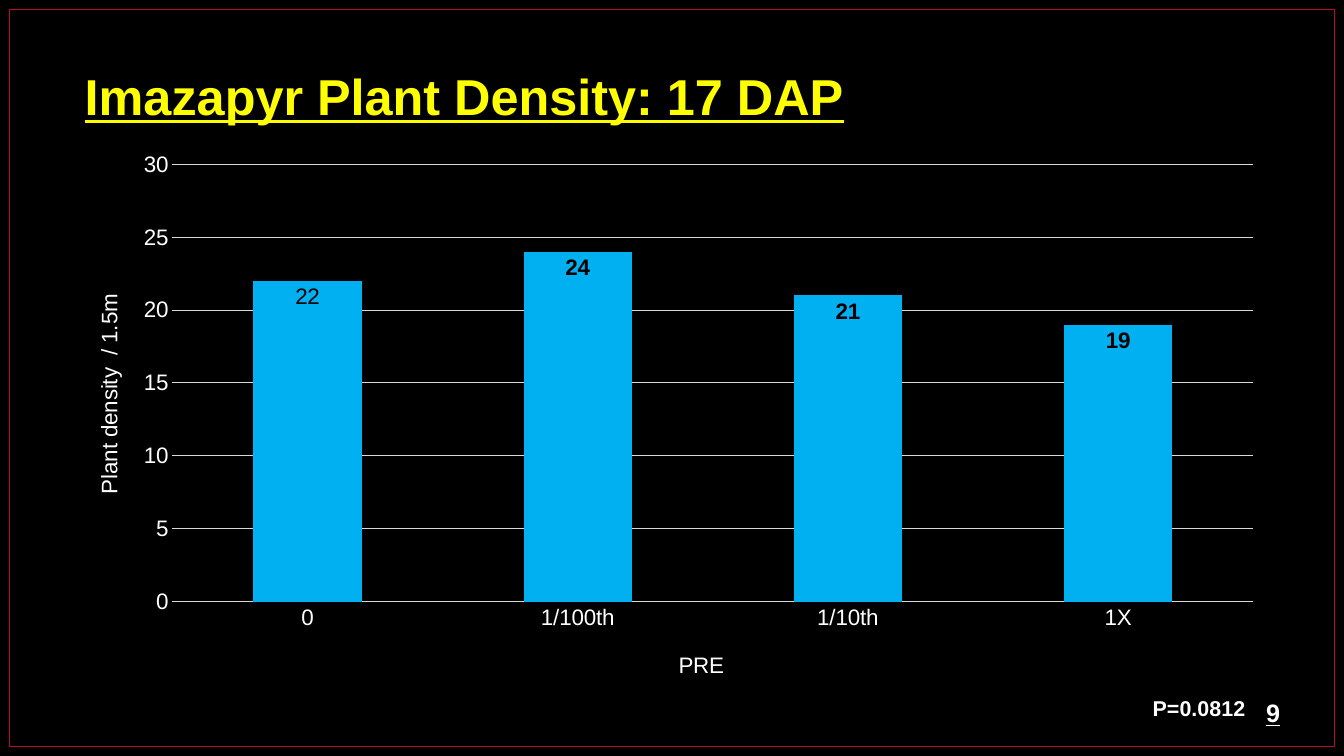
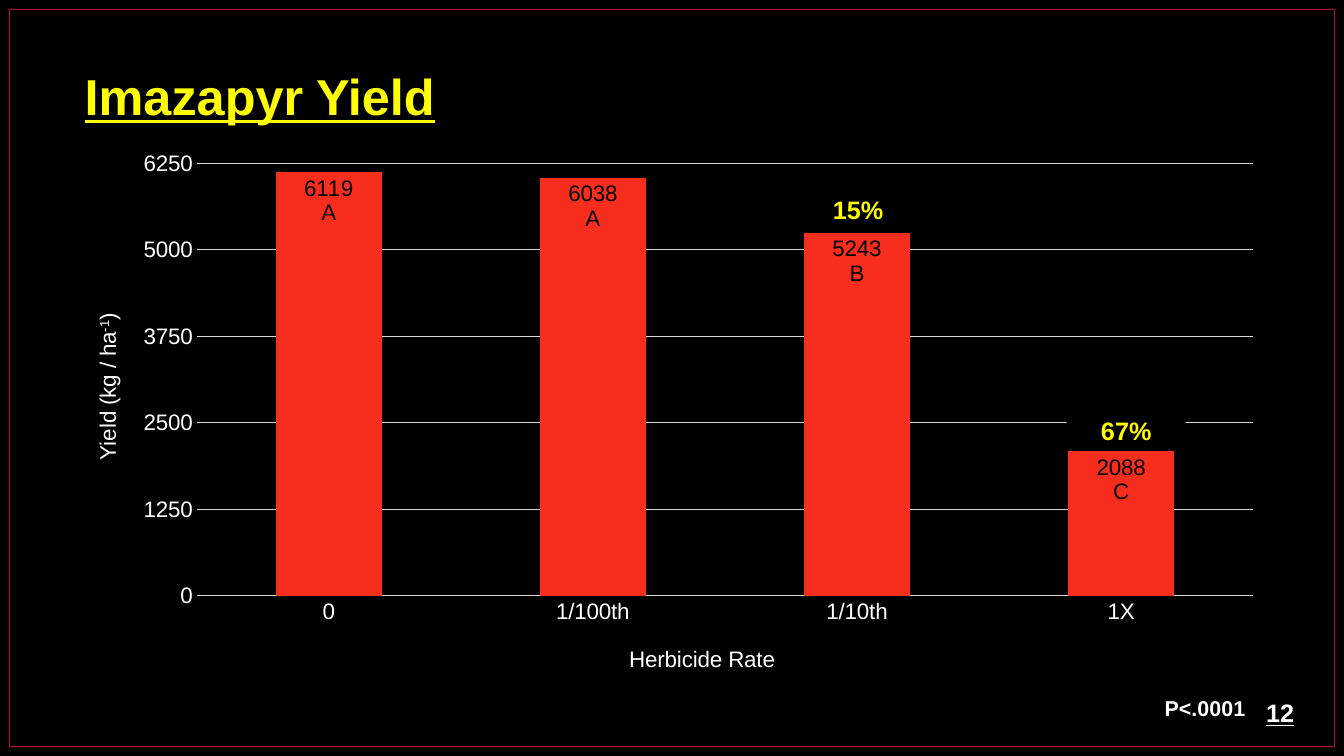
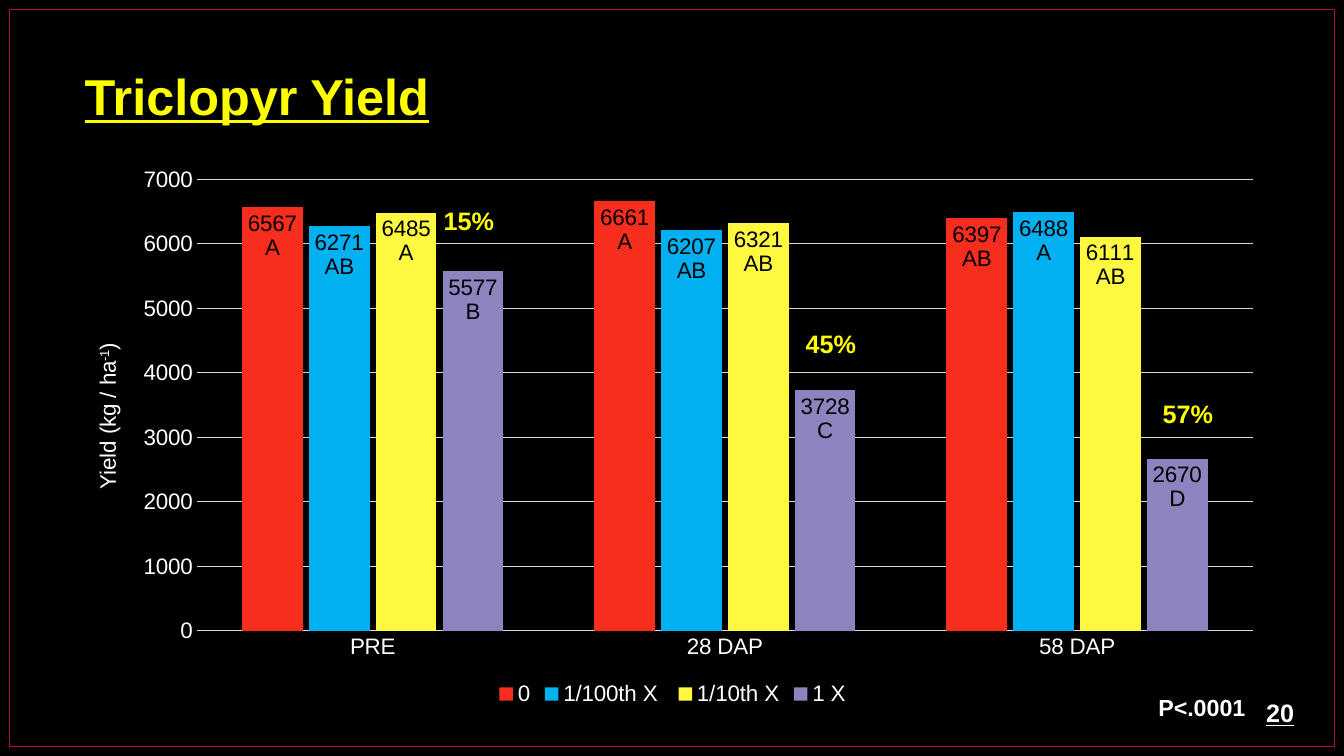
import pptx
import pptx.chart.data
import pptx.dml.color
import pptx.enum.chart
import pptx.enum.shapes
import pptx.enum.text
import pptx.oxml
import pptx.oxml.ns
import pptx.util

# Shared look
WIDTH, HEIGHT = 13.33, 7.5
FONT = "Arial"
BLACK, WHITE, YELLOW, CRIMSON, GRID = "000000", "FFFFFF", "FFFF00", "BA0C2F", "D9D9D9"
RED, BLUE, LEMON, VIOLET = "F72D1D", "00B0F0", "FFF840", "8C84BE"
AXIS_SIZE = 16
CHART_LEFT, CHART_WIDTH, CHART_HEIGHT = 0.67, 12, 5.5
PLOT_RIGHT = 12.43
CALLOUT_SIZE = (1.18, 0.4)
RATES = ["0", "1/100th", "1/10th", "1X"]
YIELD = [("Yield (kg / ha", False), ("-1", True), (")", False)]

# Content: plot is left, top, bottom; axis titles are runs, left, top;
# series are name, colour, values, letters; callouts are text, left, top, fill
SLIDES = [
    {
        "title": "Imazapyr Plant Density: 17 DAP", "number": "9",
        "p_value": ("P=0.0812", 15.3, 0.8),
        "chart_top": 1.4, "plot": (1.71, 1.63, 5.97), "scale": (30, 5),
        "category_title": ([("PRE", False)], 6.69, 6.42),
        "value_title": ([("Plant density  / 1.5m", False)], 0.9, 2.88),
        "categories": RATES,
        "series": [("Series 1", BLUE, [22, 24, 21, 19], None)],
        "callouts": [],
    },
    {
        "title": "Imazapyr Yield", "number": "12",
        "p_value": ("P<.0001", 15.3, 0.8),
        "chart_top": 1.34, "plot": (1.95, 1.45, 5.91), "scale": (6500, 1250),
        "category_title": ([("Herbicide Rate", False)], 6.2, 6.36),
        "value_title": (YIELD, 0.9, 3.08),
        "categories": RATES,
        "series": [("Series 1", RED, [6119, 6038, 5243, 2088], ["A", "A", "B", "C"])],
        "callouts": [("15%", 7.92, 1.88, None), ("67%", 10.58, 4.07, BLACK)],
    },
    {
        "title": "Triclopyr Yield", "number": "20",
        "p_value": ("P<.0001", 16.6, 0.7),
        "chart_top": 1.55, "plot": (1.95, 1.78, 6.26), "scale": (7000, 1000),
        "category_title": None,
        "value_title": (YIELD, 0.9, 3.37),
        "categories": ["PRE", "28 DAP", "58 DAP"],
        "series": [
            ("0", RED, [6567, 6661, 6397], ["A", "A", "AB"]),
            ("1/100th X ", BLUE, [6271, 6207, 6488], ["AB", "AB", "A"]),
            ("1/10th X", LEMON, [6485, 6321, 6111], ["A", "AB", "AB"]),
            ("1 X", VIOLET, [5577, 3728, 2670], ["B", "C", "D"]),
        ],
        "callouts": [("15%", 4.06, 1.99, None), ("45%", 7.65, 3.21, None),
                     ("57%", 11.19, 3.9, None)],
    },
]


def rgb(color):
    return pptx.dml.color.RGBColor.from_string(color)


def inches(*lengths):
    return [pptx.util.Inches(length) for length in lengths]


def style_font(font, size, color, bold=False, underline=None):
    font.name, font.size = FONT, pptx.util.Pt(size)
    font.bold, font.underline = bold, underline
    font.color.rgb = rgb(color)


def write(shape, text, size, color, align="LEFT", anchor="TOP", underline=None):
    frame = shape.text_frame
    frame.word_wrap = True
    frame.auto_size = pptx.enum.text.MSO_AUTO_SIZE.NONE
    frame.vertical_anchor = getattr(pptx.enum.text.MSO_ANCHOR, anchor)
    paragraph = frame.paragraphs[0]
    paragraph.text = text
    paragraph.alignment = getattr(pptx.enum.text.PP_ALIGN, align)
    style_font(paragraph.font, size, color, True, underline)
    return paragraph


def add_text(slide, box, *arguments, **options):
    shape = slide.shapes.add_textbox(*inches(*box))
    return shape, write(shape, *arguments, **options)


# Chart parts
def place(parent, index, chart_top, left, top, right=None, bottom=None):
    """Fix a chart part at slide coordinates."""
    layout = parent.find(pptx.oxml.ns.qn("c:layout"))
    if layout is not None:
        parent.remove(layout)
    values = []
    if right is not None:
        values.append(("layoutTarget", "inner"))
    values += [("xMode", "edge"), ("yMode", "edge"),
               ("x", (left - CHART_LEFT) / CHART_WIDTH),
               ("y", (top - chart_top) / CHART_HEIGHT)]
    if right is not None:
        values += [("w", (right - left) / CHART_WIDTH),
                   ("h", (bottom - top) / CHART_HEIGHT)]
    body = "".join(f'<c:{tag} val="{value}"/>' for tag, value in values)
    parent.insert(index, pptx.oxml.parse_xml(
        f'<c:layout {pptx.oxml.ns.nsdecls("c")}><c:manualLayout>{body}'
        '</c:manualLayout></c:layout>'))


def title_axis(axis, chart_top, title, rotation):
    runs, left, top = title
    frame = axis.axis_title.text_frame
    frame._txBody.bodyPr.set("rot", str(rotation))
    frame._txBody.bodyPr.set("vert", "horz")
    paragraph = frame.paragraphs[0]
    style_font(paragraph.font, AXIS_SIZE, WHITE)
    for text, superscript in runs:
        run = paragraph.add_run()
        run.text = text
        style_font(run.font, AXIS_SIZE, WHITE)
        if superscript:
            run._r.get_or_add_rPr().set("baseline", "30000")
    place(axis.axis_title._element, 1, chart_top, left, top)


def style_axis(axis):
    axis.major_tick_mark = axis.minor_tick_mark = pptx.enum.chart.XL_TICK_MARK.NONE
    style_font(axis.tick_labels.font, AXIS_SIZE, WHITE)


def style_line(line):
    line.color.rgb = rgb(GRID)
    line.width = pptx.util.Pt(0.75)


def label_series(series, values, letters):
    inside_end = pptx.enum.chart.XL_LABEL_POSITION.INSIDE_END
    labels = series.data_labels
    labels.show_value = True
    labels.position = inside_end
    style_font(labels.font, AXIS_SIZE, BLACK, True)
    if letters is None:
        first_label = series.points[0].data_label
        style_font(first_label.font, AXIS_SIZE, BLACK)
        first_label.position = inside_end
        return
    for index, (value, letter) in enumerate(zip(values, letters)):
        label = series.points[index].data_label
        label.text_frame.text = f"{value}\n{letter}"
        for paragraph in label.text_frame.paragraphs:
            style_font(paragraph.runs[0].font, AXIS_SIZE, BLACK)
        label.position = inside_end


def add_column_chart(slide, content):
    data = pptx.chart.data.CategoryChartData()
    data.categories = content["categories"]
    for name, _, values, _ in content["series"]:
        data.add_series(name, values)
    top = content["chart_top"]
    chart = slide.shapes.add_chart(
        pptx.enum.chart.XL_CHART_TYPE.COLUMN_CLUSTERED,
        *inches(CHART_LEFT, top, CHART_WIDTH, CHART_HEIGHT), data).chart
    style_font(chart.font, 10, BLACK)
    chart.has_title = False
    chart.has_legend = len(content["series"]) > 1
    if chart.has_legend:
        chart.legend.position = pptx.enum.chart.XL_LEGEND_POSITION.BOTTOM
        chart.legend.include_in_layout = False
        style_font(chart.legend.font, AXIS_SIZE, WHITE)

    category_axis, value_axis = chart.category_axis, chart.value_axis
    style_axis(category_axis)
    style_axis(value_axis)
    style_line(category_axis.format.line)
    value_axis.format.line.fill.background()
    style_line(value_axis.major_gridlines.format.line)
    value_axis.minimum_scale = 0
    value_axis.maximum_scale, value_axis.major_unit = content["scale"]
    title_axis(value_axis, top, content["value_title"], -5400000)
    if content["category_title"]:
        title_axis(category_axis, top, content["category_title"], 0)

    plot = chart.plots[0]
    plot.gap_width, plot.overlap, plot.vary_by_categories = 150, -10, False
    for series, (_, color, values, letters) in zip(plot.series, content["series"]):
        series.format.fill.solid()
        series.format.fill.fore_color.rgb = rgb(color)
        label_series(series, values, letters)
    plot_left, plot_top, plot_bottom = content["plot"]
    place(chart._chartSpace.chart.plotArea, 0, top,
          plot_left, plot_top, PLOT_RIGHT, plot_bottom)


# Slides
def set_up_master(master, slide):
    """Give the master a black ground and a thin frame."""
    master.background.fill.solid()
    master.background.fill.fore_color.rgb = rgb(BLACK)
    frame = slide.shapes.add_shape(pptx.enum.shapes.MSO_SHAPE.RECTANGLE,
                                   *inches(0.09, 0.09, WIDTH - 0.18, HEIGHT - 0.18))
    frame.shadow.inherit = False
    frame.fill.background()
    frame.line.color.rgb = rgb(CRIMSON)
    frame.line.width = pptx.util.Pt(0.75)
    master.shapes._spTree.append(frame._element)


def build_slide(slide, content):
    title = slide.shapes.title
    title.left, title.top, title.width, title.height = inches(0.74, 0.6, 11.93, 0.74)
    write(title, content["title"], 36, YELLOW, underline=True)
    add_text(slide, (12.46, 6.87, 0.62, 0.4), content["number"], 18, WHITE,
             anchor="MIDDLE", underline=True)
    add_column_chart(slide, content)
    text, size, spacing = content["p_value"]
    _, paragraph = add_text(slide, (7.5, 6.9, 4.95, 0.3), text, size, WHITE, "RIGHT")
    paragraph.line_spacing = spacing
    for text, left, top, fill in content["callouts"]:
        callout, _ = add_text(slide, (left, top, *CALLOUT_SIZE), text, 18, YELLOW,
                              "CENTER", "MIDDLE")
        if fill:
            callout.fill.solid()
            callout.fill.fore_color.rgb = rgb(fill)


def main():
    presentation = pptx.Presentation()
    presentation.slide_width, presentation.slide_height = inches(WIDTH, HEIGHT)
    title_only = presentation.slide_layouts.get_by_name("Title Only")
    for index, content in enumerate(SLIDES):
        slide = presentation.slides.add_slide(title_only)
        if index == 0:
            set_up_master(presentation.slide_master, slide)
        build_slide(slide, content)
    presentation.save("out.pptx")


if __name__ == "__main__":
    main()
